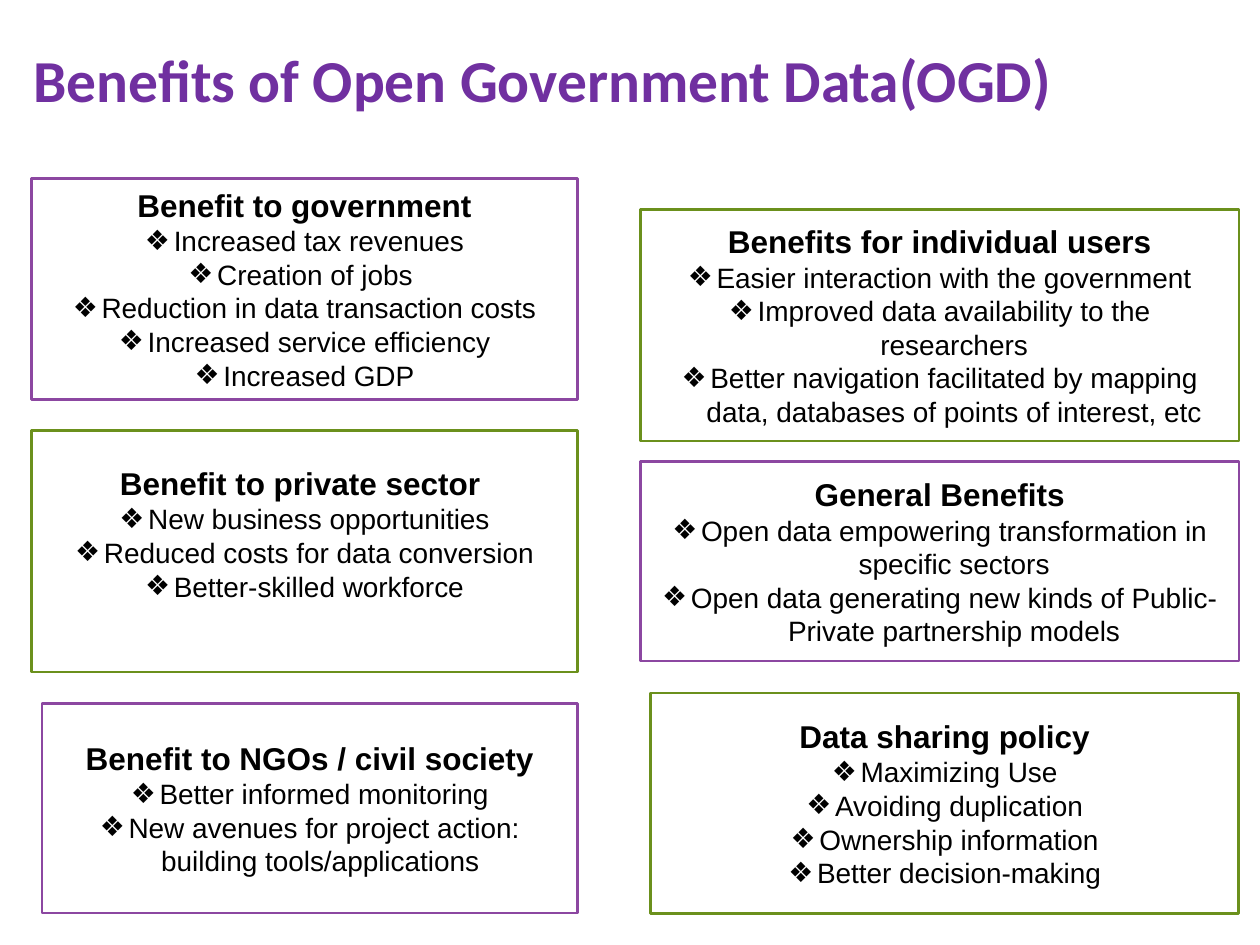
from lxml.etree import SubElement
from pptx import Presentation
from pptx.dml.color import RGBColor
from pptx.enum.shapes import MSO_SHAPE as Shape
from pptx.enum.text import MSO_ANCHOR as Anchor, PP_ALIGN as Align
from pptx.oxml.ns import qn
from pptx.util import Cm, Pt

COLORS = {"title": "7030A0", "purple": "8C47A1", "green": "6B901C", "text": "000000"}

BENEFITS = [
    ((0.64, 3.6, 11, 4.45), "purple", "Benefit to government",
     ["Increased tax revenues", "Creation of jobs ", "Reduction in data transaction costs",
      "Increased service efficiency", "Increased GDP"], 0.13),
    ((0.64, 8.68, 11, 4.87), "green", "Benefit to private sector ",
     ["New business opportunities", "Reduced costs for data conversion",
      "Better-skilled workforce"], 0.85),
    ((0.85, 14.18, 10.79, 4.23), "purple", "Benefit to NGOs / civil society",
     ["Better informed monitoring",
      "New avenues for project action: building tools/applications "], 0.13),
    ((12.91, 4.23, 12.07, 4.66), "green", "Benefits for individual users",
     ["Easier interaction with the government", "Improved data availability to the researchers",
      "Better navigation facilitated by mapping data, databases of points of interest, etc"], 0.13),
    ((12.91, 9.31, 12.07, 4.02), "purple", "General Benefits",
     ["Open data empowering transformation in specific sectors",
      "Open data generating new kinds of Public-Private partnership models"], 0.13),
    ((13.12, 13.97, 11.85, 4.45), "green", "Data sharing policy",
     ["Maximizing Use", "Avoiding duplication", "Ownership information",
      "Better decision-making"], 0.13),
]


class SlideBuilder:
    def __init__(self, slide):
        self.slide = slide
        self.bullet_indent = Cm(0.58)

    def color(self, name):
        return RGBColor.from_string(COLORS[name])

    def style(self, paragraph, size, color="text", bold=False, font="Arial"):
        for run in paragraph.runs:
            run.font.name = font
            run.font.size = Pt(size)
            run.font.bold = bold
            run.font.color.rgb = self.color(color)

    def title(self, area, text):
        shape = self.slide.shapes.add_textbox(*map(Cm, area))
        text_frame = shape.text_frame
        text_frame.word_wrap = True
        text_frame.vertical_anchor = Anchor.MIDDLE
        text_frame.text = text
        self.style(text_frame.paragraphs[0], 34, "title", True, "Calibri")

    def bullet(self, paragraph):
        properties = paragraph._p.get_or_add_pPr()
        properties.set("marL", str(self.bullet_indent))
        properties.set("indent", str(-self.bullet_indent))
        SubElement(properties, qn("a:buFont"), typeface="Arial")
        SubElement(properties, qn("a:buChar"), char="❖")

    def benefit_box(self, area, color, heading, items, bottom_margin):
        shape = self.slide.shapes.add_shape(Shape.RECTANGLE, *map(Cm, area))
        shape.shadow.inherit = False
        shape.fill.background()
        shape.line.color.rgb = self.color(color)
        shape.line.width = Pt(1.5)
        text_frame = shape.text_frame
        text_frame.word_wrap = True
        text_frame.vertical_anchor = Anchor.MIDDLE
        text_frame.margin_bottom = Cm(bottom_margin)
        text_frame.text = "\n".join([heading, *items])
        for index, paragraph in enumerate(text_frame.paragraphs):
            paragraph.alignment = Align.CENTER
            if index:
                self.bullet(paragraph)
                self.style(paragraph, 16)
            else:
                self.style(paragraph, 18, bold=True)


def main():
    presentation = Presentation()
    presentation.slide_width = Cm(25.4)
    presentation.slide_height = Cm(19.05)
    builder = SlideBuilder(presentation.slides.add_slide(presentation.slide_layouts[6]))
    builder.title((0.43, 0.64, 21.59, 1.9), "Benefits of Open Government Data(OGD)")
    for benefit in BENEFITS:
        builder.benefit_box(*benefit)
    presentation.save("out.pptx")


if __name__ == "__main__":
    main()
